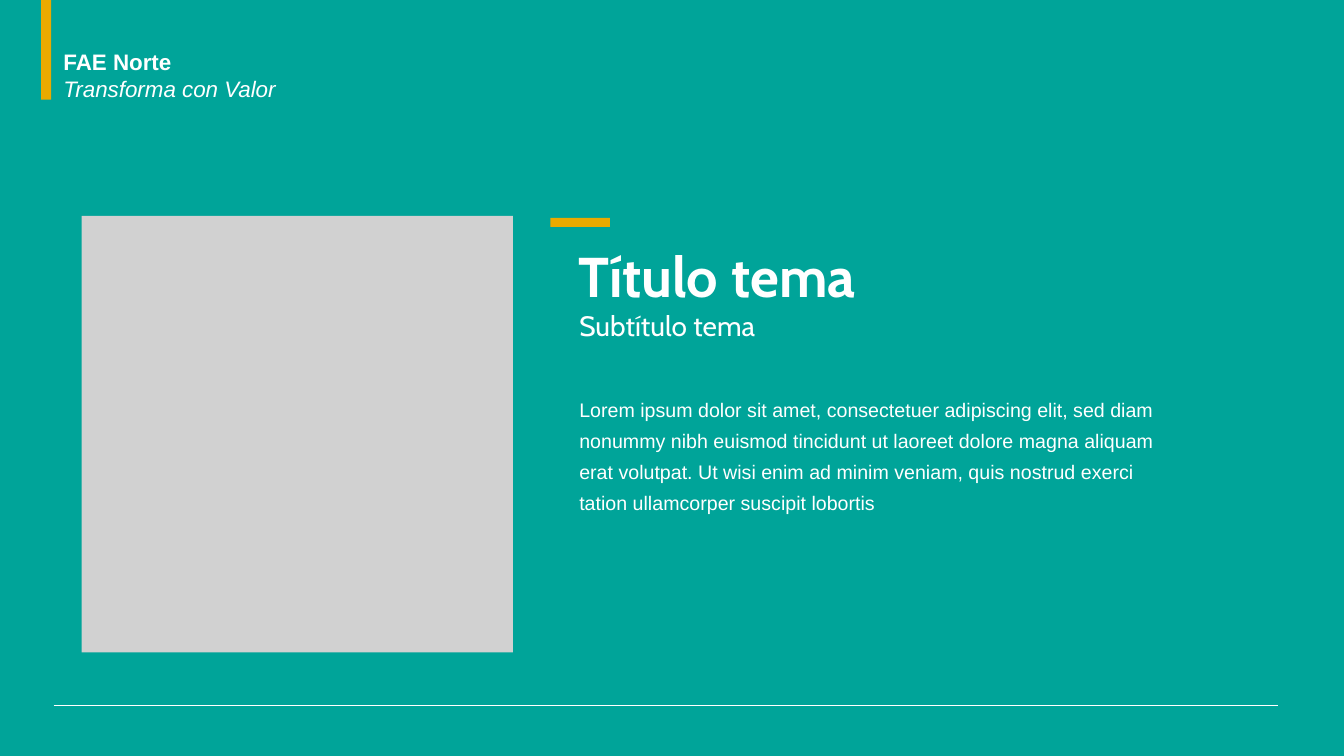
from lxml.etree import SubElement
from pptx import Presentation
from pptx.dml.color import RGBColor
from pptx.enum.shapes import MSO_CONNECTOR, MSO_SHAPE
from pptx.enum.text import MSO_ANCHOR, MSO_AUTO_SIZE
from pptx.oxml.ns import qn
from pptx.util import Cm, Pt

TEAL = RGBColor(0x00, 0xA4, 0x99)
GOLD = RGBColor(0xEA, 0xAA, 0x00)
GREY = RGBColor(0xD1, 0xD1, 0xD1)
WHITE = RGBColor(0xFF, 0xFF, 0xFF)

BODY = (
    "Lorem ipsum dolor sit amet, consectetuer adipiscing elit, sed diam "
    "nonummy nibh euismod tincidunt ut laoreet dolore magna aliquam erat "
    "volutpat. Ut wisi enim ad minim veniam, quis nostrud exerci tation "
    "ullamcorper suscipit lobortis"
)


def add_block(slide, x, y, width, height, color):
    block = slide.shapes.add_shape(
        MSO_SHAPE.RECTANGLE, Cm(x), Cm(y), Cm(width), Cm(height))
    block.shadow.inherit = False
    block.fill.solid()
    block.fill.fore_color.rgb = color
    block.line.fill.background()


def add_text(slide, x, y, width, height, lines, size, font, wrap=True):
    """Add a text box; each line is (text, bold, italic)."""
    box = slide.shapes.add_textbox(Cm(x), Cm(y), Cm(width), Cm(height))
    frame = box.text_frame
    frame.word_wrap = wrap
    frame.auto_size = MSO_AUTO_SIZE.NONE
    frame.text = "\n".join(text for text, _, _ in lines)
    for para, (_, bold, italic) in zip(frame.paragraphs, lines):
        para.font.name = font
        para.font.size = Pt(size)
        para.font.bold = bold
        para.font.italic = italic
        para.font.color.rgb = WHITE
    return frame


def add_rule(slide, left, right, y):
    rule = slide.shapes.add_connector(
        MSO_CONNECTOR.STRAIGHT, Cm(left), Cm(y), Cm(right), Cm(y))
    rule.line.color.rgb = WHITE
    rule.line.width = Pt(0.5)
    SubElement(rule._element.spPr, qn("a:effectLst"))


def main():
    deck = Presentation()
    deck.slide_width, deck.slide_height = Cm(33.87), Cm(19.05)
    slide = deck.slides.add_slide(deck.slide_layouts[6])
    slide.background.fill.solid()
    slide.background.fill.fore_color.rgb = TEAL

    # Image area
    add_block(slide, 2.06, 5.44, 10.87, 11, GREY)

    # Header
    header = [("FAE Norte", True, False),
              ("Transforma con Valor", False, True)]
    add_text(slide, 1.35, 1.09, 5.92, 1.63, header, 16, "Arial", wrap=False)
    add_block(slide, 1.04, 0, 0.25, 2.51, GOLD)

    # Title and subtitle
    add_block(slide, 13.87, 5.49, 1.5, 0.23, GOLD)
    title = add_text(slide, 14.33, 6.35, 10.03, 1.17,
                     [("Título tema", True, False)], 40, "Cabin")
    title.vertical_anchor = MSO_ANCHOR.MIDDLE
    sub = add_text(slide, 14.35, 7.75, 9.55, 1.14,
                   [("Subtítulo tema", False, False)], 20, "Cabin")
    sub.paragraphs[0].line_spacing = 0.9
    sub.paragraphs[0].space_before = Pt(10)

    # Body text
    body = add_text(slide, 14.35, 9.73, 15.19, 3.3,
                    [(BODY, False, False)], 14, "Arial")
    body.paragraphs[0].line_spacing = Pt(22)

    # Footer line
    add_rule(slide, 1.35, 32.21, 17.78)

    deck.save("out.pptx")


if __name__ == "__main__":
    main()
